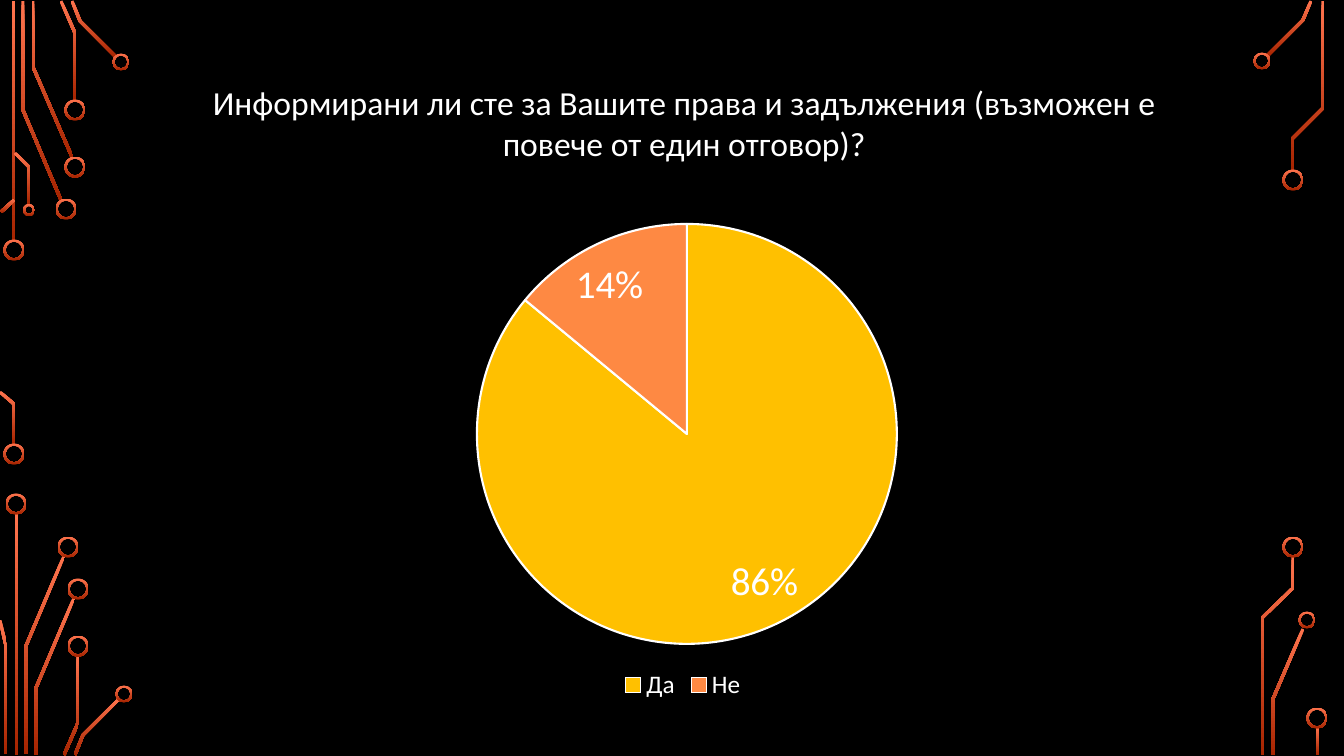
import math

from lxml import etree
from pptx import Presentation
from pptx.chart.data import CategoryChartData
from pptx.dml.color import RGBColor
from pptx.enum.chart import XL_CHART_TYPE, XL_LABEL_POSITION, XL_LEGEND_POSITION
from pptx.enum.shapes import MSO_SHAPE
from pptx.oxml.ns import qn
from pptx.util import Pt

PIE = XL_CHART_TYPE.PIE
BEST_FIT = XL_LABEL_POSITION.BEST_FIT
LEGEND_BOTTOM = XL_LEGEND_POSITION.BOTTOM
RECTANGLE, DONUT = MSO_SHAPE.RECTANGLE, MSO_SHAPE.DONUT

COLORS = {
    "background": "000000",
    "text": "FFFFFF",
    "circuit_top": "FF744E",
    "circuit_bottom": "A62400",
}
FONT = "Calibri"
SCALE = 914400 / 100.8  # EMU in one px
SLIDE_SIZE = (1344, 756)

QUESTION = "Информирани ли сте за Вашите права и задължения (възможен е повече от един отговор)?"
ANSWERS = [("Да", 86, "FFC000"), ("Не", 14, "FE8943")]
CHART_BOX = (83, 46, 1200, 659)
PIE_BOX = (477, 224, 420, 420)
TITLE_CORNER = (207, 74)

TRACE_WIDTH = 3
RING_WIDTH = 2
BARS = [(12, 1, 241), (15, 514, 241), (1316, 727, 28)]  # left, top, height
TRACES = [  # centre lines
    [(23, 1), (23, 110), (61, 200)],
    [(33, 1), (33, 67), (72, 157)],
    [(61, 1), (75, 33), (75, 101)],
    [(72, 1), (80, 21), (116, 57)],
    [(1, 212), (14, 200)],
    [(0, 392), (14, 404), (14, 444)],
    [(15, 153), (29, 167), (29, 205)],
    [(26, 754), (26, 646), (64, 556)],
    [(6, 754), (6, 646), (0, 620)],
    [(36, 755), (36, 688), (74, 598)],
    [(64, 755), (78, 723), (78, 655)],
    [(75, 755), (83, 735), (119, 699)],
    [(1267, 56), (1303, 20), (1311, 1)],
    [(1273, 755), (1273, 699), (1303, 629)],
    [(1292, 170), (1292, 139), (1323, 108), (1323, 1)],
    [(1262, 755), (1262, 618), (1293, 588), (1293, 556)],
]
RINGS = {  # diameter: centres
    21: [(14, 250), (14, 454), (66, 209), (75, 167), (75, 110), (16, 504),
         (68, 547), (78, 589), (78, 646), (1293, 180), (1293, 547), (1317, 718)],
    17: [(121, 62), (124, 694), (1262, 61), (1307, 620)],
    12: [(29, 210)],
}


def px(value):
    return round(value * SCALE)


def color(name):
    return RGBColor.from_string(COLORS[name])


def paint_circuit(shape):
    shape.shadow.inherit = False
    shape.line.fill.background()
    shape.fill.gradient()
    shape.fill.gradient_angle = 270
    for stop, name in zip(shape.fill.gradient_stops, ("circuit_top", "circuit_bottom")):
        stop.color.rgb = color(name)


def trace_side(points, offset):
    """Shift a centre line sideways, with mitred corners."""
    normals = []
    for (x1, y1), (x2, y2) in zip(points, points[1:]):
        length = math.hypot(x2 - x1, y2 - y1)
        normals.append(((y1 - y2) / length, (x2 - x1) / length))
    side = []
    for (x, y), (ax, ay), (bx, by) in zip(points, normals[:1] + normals, normals + normals[-1:]):
        reach = offset / (1 + ax * bx + ay * by)
        side.append((x + (ax + bx) * reach, y + (ay + by) * reach))
    return side


def add_trace(shapes, points):
    half = TRACE_WIDTH / 2
    outline = trace_side(points, half) + trace_side(points, -half)[::-1]
    corners = [(px(x), px(y)) for x, y in outline]
    builder = shapes.build_freeform(*corners[0])
    builder.add_line_segments(corners[1:], close=True)
    paint_circuit(builder.convert_to_shape())


def add_circuit(shapes):
    for left, top, height in BARS:
        paint_circuit(shapes.add_shape(RECTANGLE, px(left), px(top), px(TRACE_WIDTH), px(height)))
    for points in TRACES:
        add_trace(shapes, points)
    for size, centres in RINGS.items():
        for x, y in centres:
            ring = shapes.add_shape(DONUT, px(x - size / 2), px(y - size / 2), px(size), px(size))
            ring.adjustments[0] = RING_WIDTH / size
            paint_circuit(ring)


def place_in_chart(element, left, top, size=None):
    """Give a chart part a manual layout from slide px."""
    chart_left, chart_top, chart_width, chart_height = CHART_BOX
    layout = element.find(qn("c:layout"))
    if layout is None:
        layout = etree.Element(qn("c:layout"))
        element.insert(0, layout)
    settings = {"xMode": "edge", "yMode": "edge",
                "x": round((left - chart_left) / chart_width, 4),
                "y": round((top - chart_top) / chart_height, 4)}
    if size:
        settings = {"layoutTarget": "inner", **settings,
                    "w": round(size[0] / chart_width, 4),
                    "h": round(size[1] / chart_height, 4)}
    manual = etree.SubElement(layout, qn("c:manualLayout"))
    for name, value in settings.items():
        etree.SubElement(manual, qn("c:" + name)).set("val", str(value))


def style_font(font, size):
    font.name = FONT
    font.size = Pt(size)
    font.bold = False
    font.color.rgb = color("text")


def add_answer_chart(shapes):
    data = CategoryChartData()
    data.categories = [answer for answer, _, _ in ANSWERS]
    data.add_series("Series 1", [value for _, value, _ in ANSWERS])
    chart = shapes.add_chart(PIE, *map(px, CHART_BOX), data).chart
    style_font(chart.font, 10)

    chart.has_title = True
    title = chart.chart_title
    title.include_in_layout = False
    paragraph = title.text_frame.paragraphs[0]
    paragraph.text = QUESTION
    style_font(paragraph.font, 24)
    place_in_chart(title._element, *TITLE_CORNER)

    chart.has_legend = True
    chart.legend.position = LEGEND_BOTTOM
    chart.legend.include_in_layout = False
    style_font(chart.legend.font, 18)

    plot = chart.plots[0]
    plot.vary_by_categories = True
    place_in_chart(plot._element.getparent(), *PIE_BOX[:2], PIE_BOX[2:])
    for index, (_, _, fill) in enumerate(ANSWERS):
        slice_format = plot.series[0].points[index].format
        slice_format.fill.solid()
        slice_format.fill.fore_color.rgb = RGBColor.from_string(fill)
        slice_format.line.color.rgb = color("text")
        slice_format.line.width = Pt(1.5)

    labels = plot.series[0].data_labels
    labels.show_percentage = True
    labels.show_value = False
    labels.number_format = "0%"
    labels.number_format_is_linked = False
    labels.position = BEST_FIT
    style_font(labels.font, 28)


def main():
    presentation = Presentation()
    presentation.slide_width, presentation.slide_height = map(px, SLIDE_SIZE)
    slide = presentation.slides.add_slide(presentation.slide_layouts[6])
    slide.background.fill.solid()
    slide.background.fill.fore_color.rgb = color("background")
    add_circuit(slide.shapes)
    add_answer_chart(slide.shapes)
    presentation.save("out.pptx")


if __name__ == "__main__":
    main()
